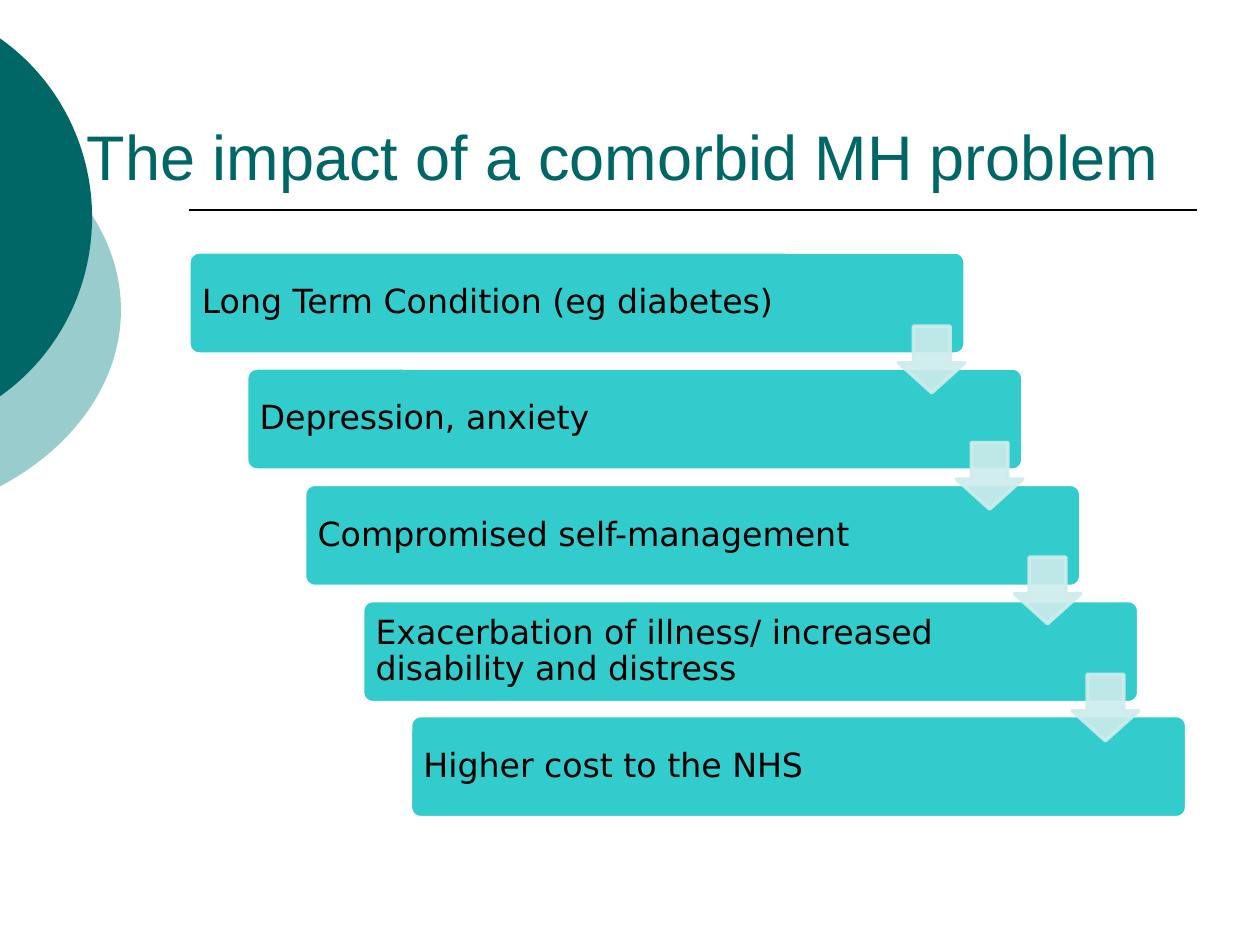
from lxml.etree import SubElement
from pptx import Presentation
from pptx.dml.color import RGBColor
from pptx.enum.shapes import MSO_CONNECTOR, MSO_SHAPE
from pptx.enum.text import MSO_ANCHOR, PP_ALIGN
from pptx.oxml.ns import qn
from pptx.util import Pt

DARK_TEAL = RGBColor(0x00, 0x66, 0x66)
PALE_TEAL = RGBColor(0x99, 0xCC, 0xCC)
TURQUOISE = RGBColor(0x33, 0xCC, 0xCC)
ARROW_TINT = RGBColor(0xCE, 0xEC, 0xEC)
BLACK = RGBColor(0, 0, 0)
WHITE = RGBColor(0xFF, 0xFF, 0xFF)


def add_filled(preset, left, top, width, height, color):
    """Add a preset shape, measured in points, with a plain fill and no shadow."""
    shape = slide.shapes.add_shape(preset, Pt(left), Pt(top), Pt(width), Pt(height))
    shape.shadow.inherit = False
    shape.fill.solid()
    shape.fill.fore_color.rgb = color
    return shape


prs = Presentation()
prs.slide_width, prs.slide_height = Pt(720), Pt(540)
slide = prs.slides.add_slide(prs.slide_layouts[6])

# Two circles running off the left edge
for *box, color in [(-254.9, 54, 324, 246.2, PALE_TEAL),
                    (-190.8, 0, 243.4, 248.4, DARK_TEAL)]:
    circle = add_filled(MSO_SHAPE.OVAL, *box, color)
    circle.line.fill.background()

# Rule under the title
rule = slide.shapes.add_connector(MSO_CONNECTOR.STRAIGHT, Pt(108), Pt(120), Pt(684), Pt(120))
rule.line.color.rgb = BLACK
rule.line.width = Pt(1)
SubElement(rule._element.spPr, qn("a:effectLst"))

# Title
title = slide.shapes.add_textbox(Pt(42.5), Pt(23.8), Pt(641.5), Pt(90)).text_frame
title.word_wrap = True
title.vertical_anchor = MSO_ANCHOR.BOTTOM
title.text = "The impact of a comorbid MH problem"
title_font = title.paragraphs[0].font
title_font.name, title_font.size = "Arial", Pt(36)
title_font.color.rgb = DARK_TEAL

# Staircase of stages
stages = [
    (108, 144, "Long Term Condition (eg diabetes)"),
    (141, 210.3, "Depression, anxiety"),
    (174.1, 276.8, "Compromised self-management"),
    (207.2, 343.2, "Exacerbation of illness/ increased disability and distress"),
    (234.6, 408.9, "Higher cost to the NHS"),
]
for left, top, wording in stages:
    stage = add_filled(MSO_SHAPE.ROUNDED_RECTANGLE, left, top, 443.5, 58.3, TURQUOISE)
    stage.adjustments[0] = 0.1
    stage.line.color.rgb = WHITE
    stage.line.width = Pt(2)
    frame = stage.text_frame
    frame.word_wrap = True
    frame.vertical_anchor = MSO_ANCHOR.MIDDLE
    frame.margin_left, frame.margin_right = Pt(5.7), Pt(76)
    frame.margin_top = frame.margin_bottom = Pt(6)
    frame.text = wording
    paragraph = frame.paragraphs[0]
    paragraph.alignment = PP_ALIGN.LEFT
    paragraph.line_spacing = 0.9
    paragraph.font.name, paragraph.font.size = "DejaVu Sans", Pt(19)
    paragraph.font.color.rgb = BLACK

# Translucent arrows leading from each stage to the next
for row, top in enumerate([186.4, 252.9, 318.4, 385.3]):
    arrow = add_filled(MSO_SHAPE.DOWN_ARROW, 513.4 + 33.1 * row, top, 38, 38, ARROW_TINT)
    arrow.adjustments[0], arrow.adjustments[1] = 0.55, 0.45
    arrow.line.color.rgb = ARROW_TINT
    arrow.line.width = Pt(2)
    for tint in arrow._element.spPr.iter(qn("a:srgbClr")):
        SubElement(tint, qn("a:alpha"), val="90000")

prs.save("out.pptx")
